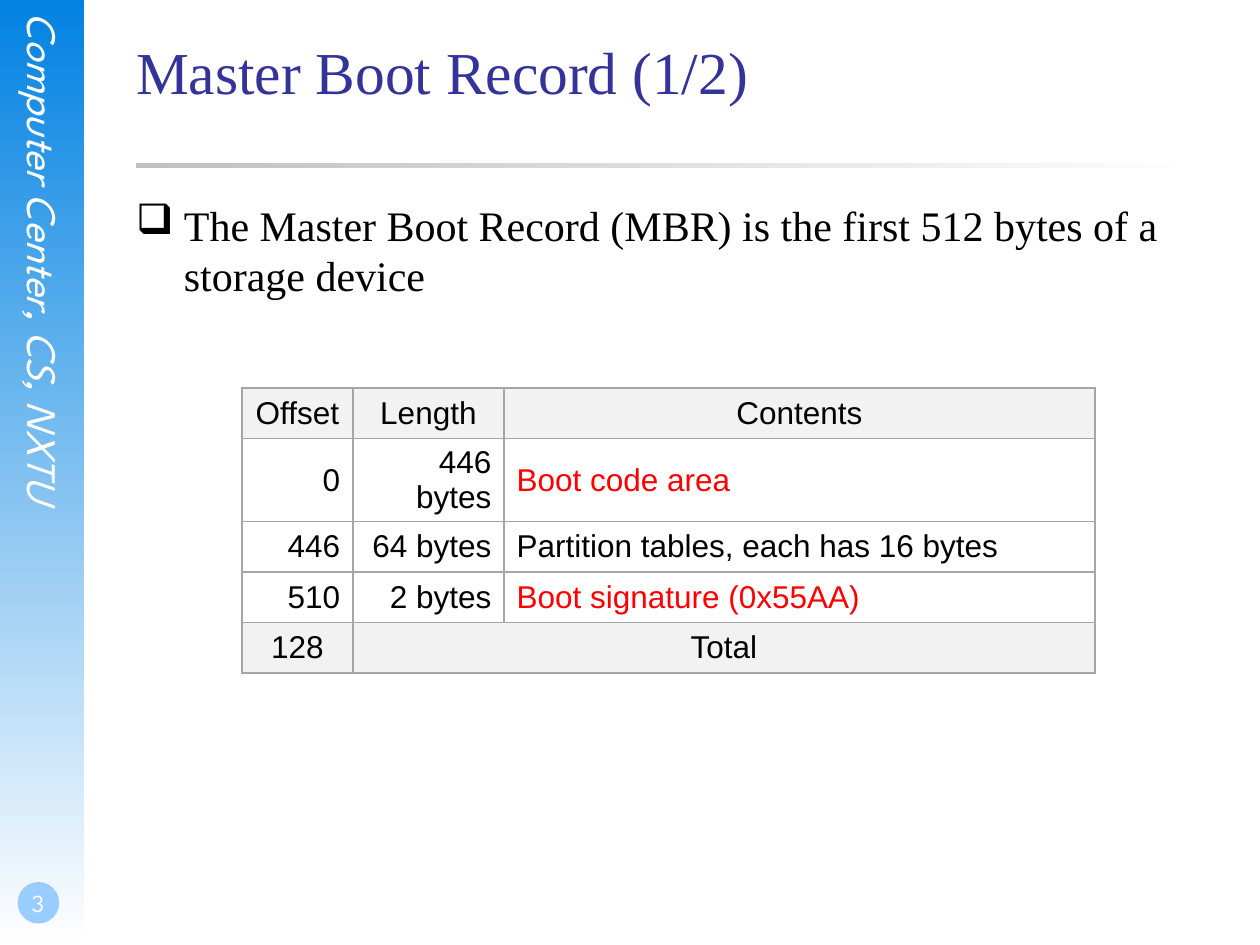
from lxml.etree import SubElement
from pptx import Presentation
from pptx.dml.color import RGBColor
from pptx.enum.shapes import MSO_SHAPE
from pptx.enum.text import MSO_ANCHOR, MSO_AUTO_SIZE, PP_ALIGN
from pptx.oxml.ns import qn
from pptx.util import Inches, Pt

# Content
TITLE = "Master Boot Record (1/2)"
BODY = "The Master Boot Record (MBR) is the first 512 bytes of a storage device"
SIDE_LABEL = "Computer Center, CS, NXTU"
PAGE_NUMBER = "3"
TABLE_ROWS = [
    ("Offset", "Length", "Contents"),
    ("0", "446 bytes", "Boot code area"),
    ("446", "64 bytes", "Partition tables, each has 16 bytes"),
    ("510", "2 bytes", "Boot signature (0x55AA)"),
    ("128", "Total", ""),
]
HIGHLIGHTED = {"Boot code area", "Boot signature (0x55AA)"}
COLUMN_WIDTHS = (0.88, 1.2, 4.69)
ROW_HEIGHT = 0.4
DATA_ALIGNMENTS = (PP_ALIGN.RIGHT, PP_ALIGN.RIGHT, PP_ALIGN.LEFT)

# Left edge and width shared by title, rule and body
CONTENT_LEFT, CONTENT_WIDTH = 1.08, 8.5

THEME = {
    "serif": "Times New Roman", "sans": "Arial", "side": "League Spartan",
    "title_size": 34, "body_size": 24, "table_size": 18, "page_size": 14,
    "title": "333399", "text": "000000", "highlight": "FF0000", "white": "FFFFFF",
    "sidebar": "0282E2", "badge": "99CCFF", "rule": "C0C0C0",
    "band": "F2F2F2", "border": "A6A6A6",
}


def color(name):
    return RGBColor.from_string(THEME[name])


def place(shape, left, top, width, height):
    shape.left, shape.top = Inches(left), Inches(top)
    shape.width, shape.height = Inches(width), Inches(height)


def write(frame, text, font, size, color_name, alignment=PP_ALIGN.LEFT):
    frame.text = text
    paragraph = frame.paragraphs[0]
    paragraph.alignment = alignment
    paragraph.font.name = THEME[font]
    paragraph.font.size = Pt(THEME[size])
    paragraph.font.color.rgb = color(color_name)
    return paragraph


def set_frame(frame, margins=(0, 0, 0, 0), anchor=MSO_ANCHOR.TOP):
    frame.margin_left, frame.margin_top, frame.margin_right, frame.margin_bottom = map(Inches, margins)
    frame.vertical_anchor = anchor
    frame.auto_size = MSO_AUTO_SIZE.NONE
    frame.word_wrap = True


def add_text_box(slide, box, **frame_options):
    frame = slide.shapes.add_textbox(*map(Inches, box)).text_frame
    set_frame(frame, **frame_options)
    return frame


def add_plain_shape(slide, kind, box, color_name, gradient_angle=None):
    shape = slide.shapes.add_shape(kind, *map(Inches, box))
    shape.shadow.inherit = False
    shape.line.fill.background()
    if gradient_angle is None:
        shape.fill.solid()
        shape.fill.fore_color.rgb = color(color_name)
    else:
        shape.fill.gradient()
        shape.fill.gradient_angle = gradient_angle
        for stop, name in zip(shape.fill.gradient_stops, (color_name, "white")):
            stop.color.rgb = color(name)


def add_borders(cell):
    properties = cell._tc.get_or_add_tcPr()
    for side in ("lnL", "lnR", "lnT", "lnB"):
        line = SubElement(properties, qn(f"a:{side}"), w=str(Pt(1)))
        fill = SubElement(line, qn("a:solidFill"))
        SubElement(fill, qn("a:srgbClr"), val=THEME["border"])


def add_record_table(slide):
    row_count = len(TABLE_ROWS)
    table = slide.shapes.add_table(
        row_count, len(COLUMN_WIDTHS), Inches(1.92), Inches(3.08),
        Inches(sum(COLUMN_WIDTHS)), Inches(ROW_HEIGHT * row_count)).table
    for column, width in zip(table.columns, COLUMN_WIDTHS):
        column.width = Inches(width)
    for row_index, row in enumerate(TABLE_ROWS):
        is_band = row_index in (0, row_count - 1)
        for column_index, text in enumerate(row):
            cell = table.cell(row_index, column_index)
            add_borders(cell)
            cell.fill.solid()
            cell.fill.fore_color.rgb = color("band" if is_band else "white")
            cell.vertical_anchor = MSO_ANCHOR.MIDDLE
            write(cell.text_frame, text, "sans", "table_size",
                  "highlight" if text in HIGHLIGHTED else "text",
                  PP_ALIGN.CENTER if is_band else DATA_ALIGNMENTS[column_index]).font.bold = False
    # The total spans the last two columns
    table.cell(row_count - 1, 1).merge(table.cell(row_count - 1, 2))


def main():
    presentation = Presentation()
    presentation.slide_width, presentation.slide_height = Inches(10), Inches(7.5)
    slide = presentation.slides.add_slide(presentation.slide_layouts[5])

    # Sidebar with vertical label and page badge
    add_plain_shape(slide, MSO_SHAPE.RECTANGLE, (0, 0, 0.67, 7.5), "sidebar", 270)
    label = add_text_box(slide, (0.15, 0.1, 0.4, 5.11))
    label._txBody.bodyPr.set("vert", "eaVert")
    write(label, SIDE_LABEL, "side", "body_size", "white").font.italic = True
    add_plain_shape(slide, MSO_SHAPE.OVAL, (0.14, 7, 0.33, 0.33), "badge")
    page = add_text_box(slide, (0, 6.83, 0.58, 0.5),
                        margins=(0.02, 0, 0, 0.05), anchor=MSO_ANCHOR.BOTTOM)
    write(page, PAGE_NUMBER, "side", "page_size", "white", PP_ALIGN.CENTER)

    # Title and fading rule
    add_plain_shape(slide, MSO_SHAPE.RECTANGLE, (CONTENT_LEFT, 1.29, CONTENT_WIDTH, 0.04), "rule", 0)
    title = slide.shapes.title
    place(title, CONTENT_LEFT, 0.28, CONTENT_WIDTH, 1.25)
    set_frame(title.text_frame)
    write(title.text_frame, TITLE, "serif", "title_size", "title")

    # Bulleted statement
    body = add_text_box(slide, (CONTENT_LEFT, 1.58, CONTENT_WIDTH, 5.08))
    paragraph = write(body, BODY, "serif", "body_size", "text")
    paragraph.space_before = Pt(6)
    properties = paragraph._p.get_or_add_pPr()
    properties.set("marL", str(Inches(0.38)))
    properties.set("indent", str(Inches(-0.38)))
    bullet = properties.makeelement(qn("a:buChar"), {"char": "❑"})
    properties.find(qn("a:defRPr")).addprevious(bullet)

    add_record_table(slide)
    presentation.save("out.pptx")


if __name__ == "__main__":
    main()
